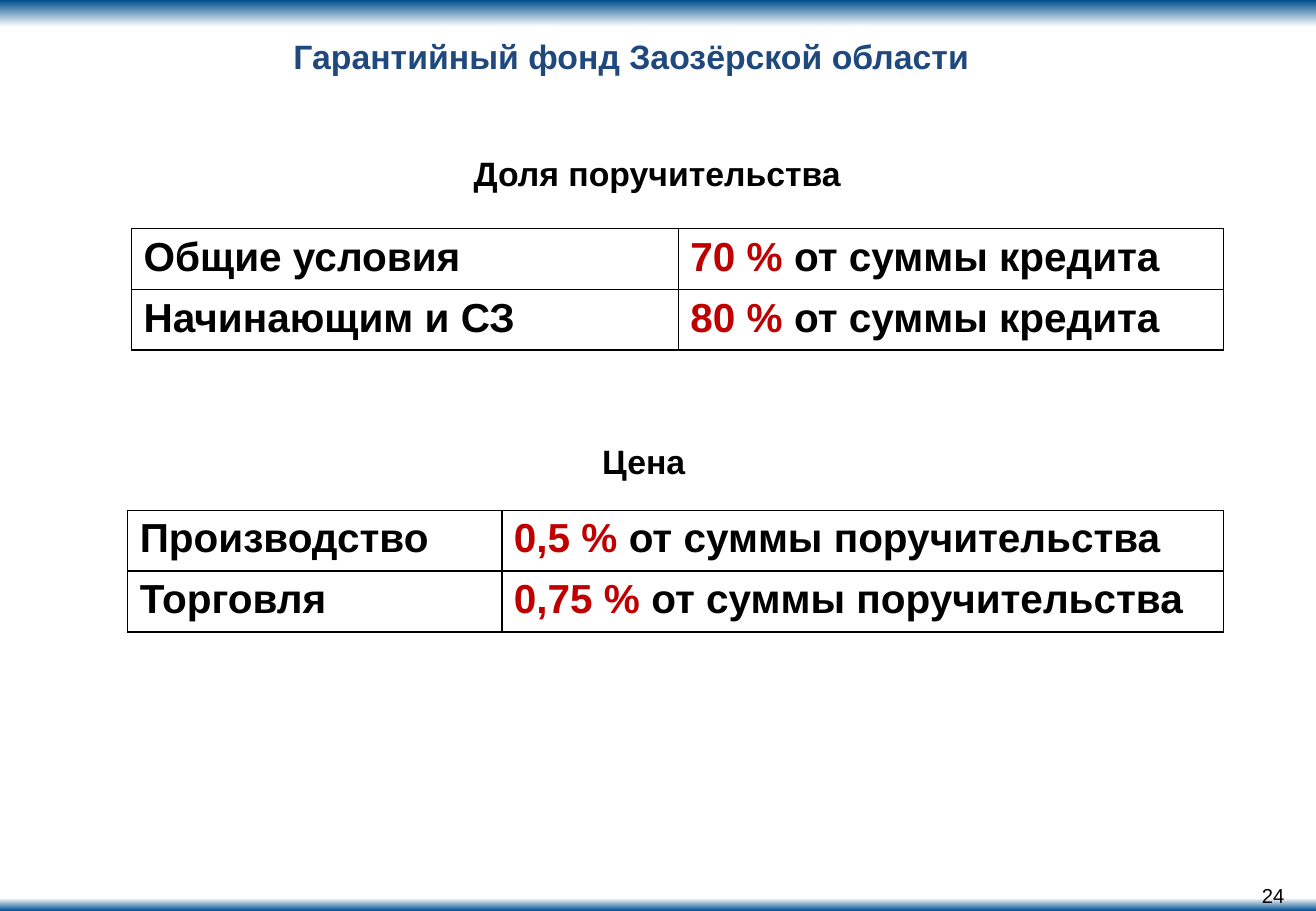
from lxml import etree
from pptx import Presentation
from pptx import util as u
from pptx.dml.color import RGBColor
from pptx.enum import shapes, text
from pptx.oxml.ns import qn

BLACK, RED, NAVY, BLUE, WHITE = "000000", "C00000", "1F497D", "004E8E", "FFFFFF"


def color(value):
    return RGBColor.from_string(value)


def add_span(para, words, size, bold, ink):
    span = para.add_run()
    span.text = words
    for name, value in {"name": "Arial", "size": u.Pt(size), "bold": bold}.items():
        setattr(span.font, name, value)
    span.font.color.rgb = color(ink)


deck = Presentation()
deck.slide_width, deck.slide_height = u.Cm(27.51), u.Cm(19.05)
page = deck.slides.add_slide(deck.slide_layouts[6])

for top, height, angle in [(18.78, 0.27, 90), (0, 0.56, 270)]:
    band = page.shapes.add_shape(
        shapes.MSO_SHAPE.RECTANGLE, 0, u.Cm(top), deck.slide_width, u.Cm(height))
    band.shadow.inherit = False
    band.line.fill.background()
    band.fill.gradient()
    band.fill.gradient_angle = angle
    for stop, (position, tint) in zip(band.fill.gradient_stops, [(0, BLUE), (1, WHITE)]):
        stop.position = position
        stop.color.rgb = color(tint)

CENTER, RIGHT, LEFT = text.PP_ALIGN.CENTER, text.PP_ALIGN.RIGHT, text.PP_ALIGN.LEFT
labels = [
    ("Гарантийный фонд Заозёрской области", (0.36, 0.74, 25.68, 0.86), 20, True, NAVY, CENTER, 0),
    ("24", (21.11, 18.47, 5.74, 0.51), 12, False, BLACK, RIGHT, 0),
    ("Доля поручительства", (9.65, 3.07, 9.22, 1.12), 20, True, BLACK, LEFT, 1),
    ("Цена", (12.34, 9.09, 2.79, 1.12), 20, True, BLACK, LEFT, 1),
]
for words, place, size, bold, ink, align, padding in labels:
    box = page.shapes.add_textbox(*map(u.Cm, place))
    frame = box.text_frame
    layout = {
        "word_wrap": True,
        "auto_size": text.MSO_AUTO_SIZE.SHAPE_TO_FIT_TEXT,
        "margin_left": u.Cm(0.25 * padding),
        "margin_right": u.Cm(0.25 * padding),
        "margin_top": u.Cm(0.13 * padding),
        "margin_bottom": u.Cm(0.13 * padding),
    }
    for name, value in layout.items():
        setattr(frame, name, value)
    para = frame.paragraphs[0]
    para.alignment = align
    add_span(para, words, size, bold, ink)

ROW_HEIGHT = 1.27
tables = [
    (2.75, 4.78, (11.43, 11.4), " от суммы кредита",
     [("Общие условия", "70 %"), ("Начинающим и СЗ", "80 %")]),
    (2.67, 10.67, (7.82, 15.09), " от суммы поручительства",
     [("Производство", "0,5 %"), ("Торговля", "0,75 %")]),
]
for left, top, widths, basis, rows in tables:
    table = page.shapes.add_table(
        len(rows), len(widths), u.Cm(left), u.Cm(top),
        u.Cm(sum(widths)), u.Cm(ROW_HEIGHT * len(rows))).table
    table.first_row = table.horz_banding = False
    for column, width in zip(table.columns, widths):
        column.width = u.Cm(width)
    for row, (category, rate) in zip(table.rows, rows):
        row.height = u.Cm(ROW_HEIGHT)
        contents = [[(category, BLACK)], [(rate, RED), (basis, BLACK)]]
        for cell, parts in zip(row.cells, contents):
            for words, ink in parts:
                add_span(cell.text_frame.paragraphs[0], words, 24, True, ink)
            props = cell._tc.get_or_add_tcPr()
            for side in ("a:lnL", "a:lnR", "a:lnT", "a:lnB"):
                border = etree.SubElement(props, qn(side), w=str(u.Pt(1)))
                fill = etree.SubElement(border, qn("a:solidFill"))
                etree.SubElement(fill, qn("a:srgbClr"), val=BLACK)
            cell.fill.background()

deck.save("out.pptx")
